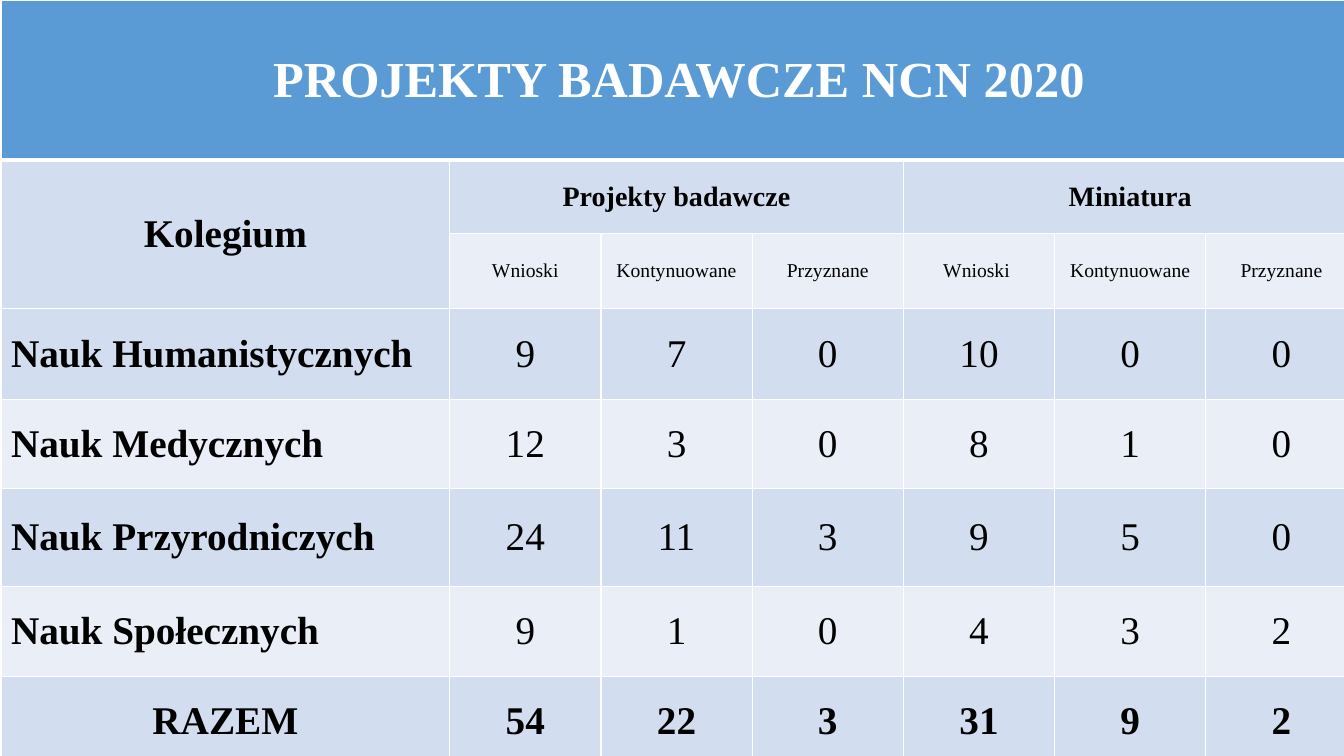
from dataclasses import dataclass

from lxml import etree
from pptx import Presentation
from pptx import util as u
from pptx.dml.color import RGBColor
from pptx.enum import text
from pptx.oxml import ns

FONT = "Times New Roman"
WHITE = "FFFFFF"
BLACK = "000000"
HEADER_BLUE = "5B9BD5"
DARK_BAND = "D2DEEF"
LIGHT_BAND = "EAEFF7"

COLUMN_WIDTHS = [4.45] + [1.5] * 6
ROW_HEIGHTS = [1.59, 0.73, 0.74, 0.9, 0.89, 0.97, 0.89, 0.89]
STAGES = ["Wnioski", "Kontynuowane", "Przyznane", "Wnioski ", "Kontynuowane", "Przyznane"]


@dataclass
class Label:
    row: int
    column: int
    wording: str
    size: int = 28
    bold: bool = True
    color: str = BLACK
    centered: bool = True
    row_span: int = 1
    column_span: int = 1


@dataclass
class College:
    name: str
    counts: list[int]
    total: bool = False


COLLEGES = [
    College("Nauk Humanistycznych", [9, 7, 0, 10, 0, 0]),
    College("Nauk Medycznych", [12, 3, 0, 8, 1, 0]),
    College("Nauk Przyrodniczych", [24, 11, 3, 9, 5, 0]),
    College("Nauk Społecznych", [9, 1, 0, 4, 3, 2]),
    College("RAZEM", [54, 22, 3, 31, 9, 2], total=True),
]


def rgb(color: str) -> RGBColor:
    return RGBColor.from_string(color)


def band_color(row: int) -> str:
    if row == 0:
        return HEADER_BLUE
    return DARK_BAND if row % 2 else LIGHT_BAND


def set_borders(cell, row: int) -> None:
    widths = {
        "a:lnL": 1,
        "a:lnR": 1,
        "a:lnT": 3 if row == 1 else 1,
        "a:lnB": 3 if row == 0 else 1,
    }
    properties = cell._tc.get_or_add_tcPr()
    for position, (tag, width) in enumerate(widths.items()):
        line = etree.Element(ns.qn(tag), w=str(u.Pt(width)))
        fill = etree.SubElement(line, ns.qn("a:solidFill"))
        etree.SubElement(fill, ns.qn("a:srgbClr"), val=WHITE)
        properties.insert(position, line)


def style_cells(table) -> None:
    for row in range(len(ROW_HEIGHTS)):
        for column in range(len(COLUMN_WIDTHS)):
            cell = table.cell(row, column)
            cell.fill.solid()
            cell.fill.fore_color.rgb = rgb(band_color(row))
            cell.vertical_anchor = text.MSO_ANCHOR.MIDDLE
            set_borders(cell, row)


def write_label(table, label: Label) -> None:
    cell = table.cell(label.row, label.column)
    if label.row_span > 1 or label.column_span > 1:
        cell.merge(table.cell(label.row + label.row_span - 1,
                              label.column + label.column_span - 1))
    paragraph = cell.text_frame.paragraphs[0]
    paragraph.alignment = text.PP_ALIGN.CENTER if label.centered else text.PP_ALIGN.LEFT
    run = paragraph.add_run()
    run.text = label.wording
    run.font.name = FONT
    run.font.size = u.Pt(label.size)
    run.font.bold = label.bold
    run.font.color.rgb = rgb(label.color)


def table_labels() -> list[Label]:
    labels = [
        Label(0, 0, "PROJEKTY BADAWCZE NCN 2020", 36, color=WHITE, column_span=7),
        Label(1, 0, "Kolegium", row_span=2),
        Label(1, 1, "Projekty badawcze", 20, column_span=3),
        Label(1, 4, "Miniatura", 20, column_span=3),
    ]
    for column, stage in enumerate(STAGES, start=1):
        labels.append(Label(2, column, stage, 14, bold=False))
    for row, college in enumerate(COLLEGES, start=3):
        labels.append(Label(row, 0, college.name, centered=college.total))
        for column, count in enumerate(college.counts, start=1):
            labels.append(Label(row, column, str(count), bold=college.total))
    return labels


def main() -> None:
    presentation = Presentation()
    presentation.slide_width = u.Inches(13.33)
    presentation.slide_height = u.Inches(7.5)
    slide = presentation.slides.add_slide(presentation.slide_layouts[6])

    table = slide.shapes.add_table(
        len(ROW_HEIGHTS), len(COLUMN_WIDTHS), u.Inches(0.01), u.Inches(0),
        u.Inches(sum(COLUMN_WIDTHS)), u.Inches(sum(ROW_HEIGHTS))).table
    for column, width in zip(table.columns, COLUMN_WIDTHS):
        column.width = u.Inches(width)
    for row, height in zip(table.rows, ROW_HEIGHTS):
        row.height = u.Inches(height)

    style_cells(table)
    for label in table_labels():
        write_label(table, label)

    presentation.save("out.pptx")


if __name__ == "__main__":
    main()
